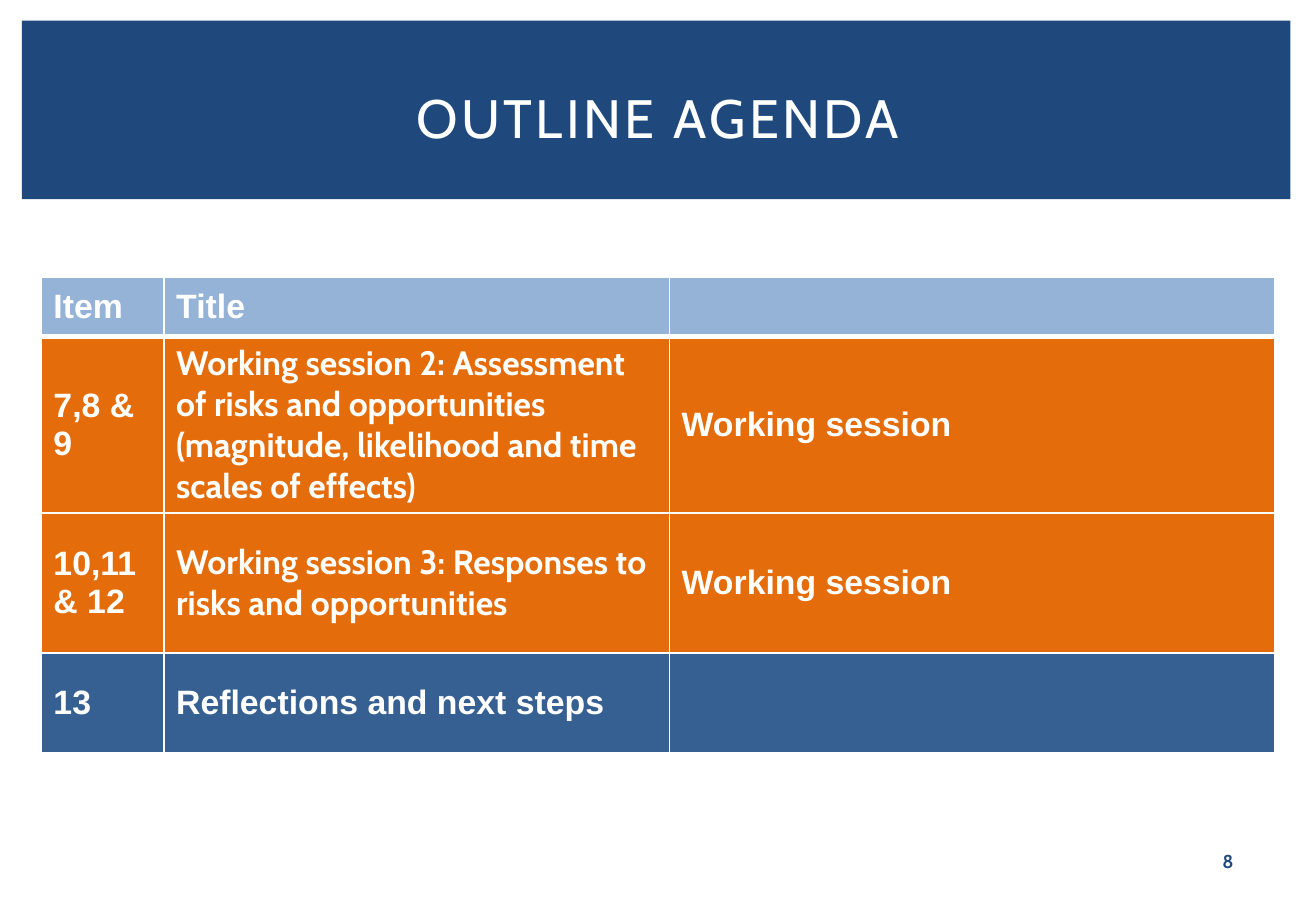
from lxml import etree
from pptx import Presentation
from pptx.dml.color import RGBColor
from pptx.enum import shapes, text
from pptx.oxml.ns import qn
from pptx.util import Inches, Pt

WHITE, NAVY = "FFFFFF", "1F497D"
HEADER, ORANGE, BLUE = "95B3D7", "E46C0A", "376092"

COLUMN_WIDTHS = [1.01, 4.16, 4.98]
# Height, fill, texts of each row
AGENDA = [
    (0.49, HEADER, ["Item", "Title", ""]),
    (1.43, ORANGE, ["7,8 & 9",
                    "Working session 2: Assessment of risks and opportunities "
                    "(magnitude, likelihood and time scales of effects)",
                    "Working session"]),
    (1.15, ORANGE, ["10,11 & 12",
                    "Working session 3: Responses to risks and opportunities",
                    "Working session"]),
    (0.82, BLUE, ["13", "Reflections and next steps", ""]),
]


def set_fill(target, colour):
    target.fill.solid()
    target.fill.fore_color.rgb = RGBColor.from_string(colour)


def place(shape, left, top, width, height):
    shape.left, shape.top = Inches(left), Inches(top)
    shape.width, shape.height = Inches(width), Inches(height)


def add_span(para, words, size, font, colour, bold=False):
    span = para.add_run()
    span.text = words
    span.font.size = Pt(size)
    span.font.name = font
    span.font.bold = bold
    span.font.color.rgb = RGBColor.from_string(colour)
    return span


def add_banner(page):
    banner = page.shapes.add_shape(shapes.MSO_SHAPE.RECTANGLE, Inches(0.18),
                                   Inches(0.17), Inches(10.44), Inches(1.47))
    banner.shadow.inherit = False
    set_fill(banner, NAVY)
    banner.line.fill.background()
    # The banner lies behind the title
    page.shapes.title._element.addprevious(banner._element)


def add_title(page, words):
    title = page.shapes.title
    place(title, 0.45, 0.39, 9.93, 1.15)
    title.text_frame.vertical_anchor = text.MSO_ANCHOR.MIDDLE
    para = title.text_frame.paragraphs[0]
    para.alignment = text.PP_ALIGN.CENTER
    span = add_span(para, words, 32, "Cabin", WHITE)
    span.font._element.set("spc", "200")


def add_page_number(page, number):
    box = page.shapes.add_textbox(Inches(9.76), Inches(6.95), Inches(0.69), Inches(0.3))
    box.text_frame.word_wrap = True
    box.text_frame.vertical_anchor = text.MSO_ANCHOR.MIDDLE
    para = box.text_frame.paragraphs[0]
    para.alignment = text.PP_ALIGN.CENTER
    para.line_spacing = 0.95
    add_span(para, number, 11, "Cabin", NAVY, bold=True)


def set_borders(cell, bottom):
    properties = cell._tc.get_or_add_tcPr()
    widths = {"a:lnL": 1, "a:lnR": 1, "a:lnT": 1, "a:lnB": bottom}
    for position, (side, width) in enumerate(widths.items()):
        line = etree.Element(qn(side), w=str(Pt(width)))
        fill = etree.SubElement(line, qn("a:solidFill"))
        etree.SubElement(fill, qn("a:srgbClr"), val=WHITE)
        properties.insert(position, line)


def add_agenda(page):
    frame = page.shapes.add_table(len(AGENDA), len(COLUMN_WIDTHS), Inches(0.34), Inches(2.28),
                                  Inches(sum(COLUMN_WIDTHS)),
                                  Inches(sum(row[0] for row in AGENDA)))
    table = frame.table
    table.horz_banding = False
    for column, width in zip(table.columns, COLUMN_WIDTHS):
        column.width = Inches(width)
    for r, (height, colour, texts) in enumerate(AGENDA):
        table.rows[r].height = Inches(height)
        for c, words in enumerate(texts):
            cell = table.cell(r, c)
            cell.vertical_anchor = text.MSO_ANCHOR.MIDDLE
            set_fill(cell, colour)
            # A thick line closes the header and opens the row below it
            set_borders(cell, 3 if r == 0 else 1)
            if r == 1:
                cell._tc.tcPr.find(qn("a:lnT")).set("w", str(Pt(3)))
            if words:
                font = "Cabin" if words.startswith("Working session ") else "Arial"
                add_span(cell.text_frame.paragraphs[0], words, 20, font, WHITE, bold=True)


def main():
    deck = Presentation()
    deck.slide_width, deck.slide_height = Inches(10.83), Inches(7.5)
    page = deck.slides.add_slide(deck.slide_layouts.get_by_name("Title Only"))
    add_banner(page)
    add_title(page, "OUTLINE AGENDA")
    add_agenda(page)
    add_page_number(page, "8")
    deck.save("out.pptx")


if __name__ == "__main__":
    main()
